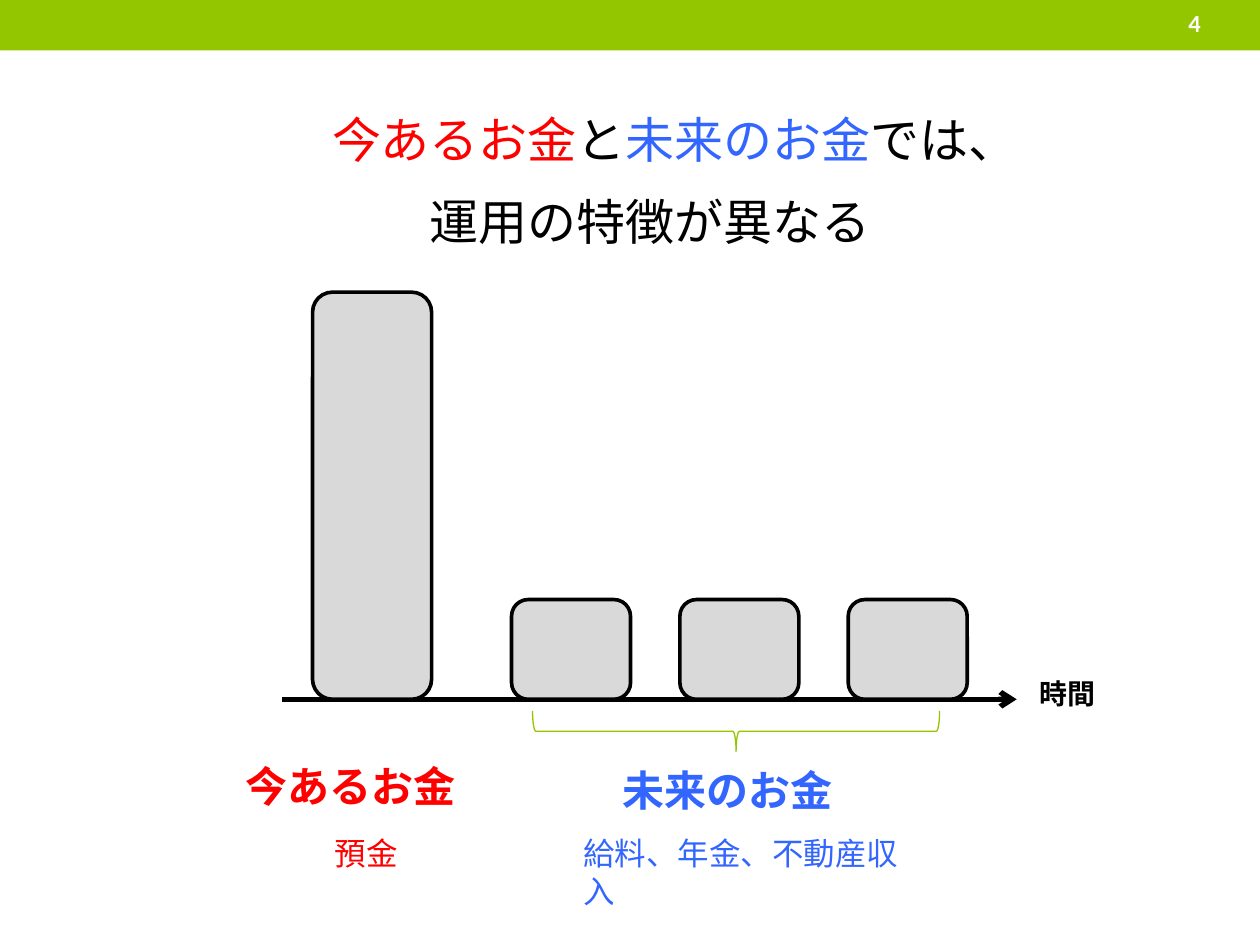
import pptx
import pptx.dml.color
import pptx.enum.shapes
import pptx.enum.text
import pptx.oxml
import pptx.oxml.ns
import pptx.util

Pt = pptx.util.Pt
SHAPE = pptx.enum.shapes.MSO_SHAPE
ALIGN = pptx.enum.text.PP_ALIGN
ANCHOR = pptx.enum.text.MSO_ANCHOR

FONT = "Calibri"
GREEN, RED, BLUE = "94C600", "FF0000", "3366FF"
BLACK, WHITE, GREY = "000000", "FFFFFF", "D9D9D9"


def rgb(color):
    return pptx.dml.color.RGBColor.from_string(color)


def format_run(r, size, color, bold=False):
    r.font.name = FONT
    r.font.size = Pt(size)
    r.font.bold = bold
    r.font.color.rgb = rgb(color)


def add_text(s, box, text, size, color, bold=False, anchor=ANCHOR.TOP):
    tf = s.shapes.add_textbox(*map(Pt, box)).text_frame
    tf.word_wrap = True
    tf.vertical_anchor = anchor
    tf.text = text
    format_run(tf.paragraphs[0].runs[0], size, color, bold)


def add_shape(s, kind, box, fill=None, line=None, width=0):
    sp = s.shapes.add_shape(kind, *map(Pt, box))
    sp.shadow.inherit = False
    if fill:
        sp.fill.solid()
        sp.fill.fore_color.rgb = rgb(fill)
    else:
        sp.fill.background()
    if line:
        sp.line.color.rgb = rgb(line)
        sp.line.width = Pt(width)
    else:
        sp.line.fill.background()
    return sp


def add_header(s, box, number):
    x, y, w, h = box
    add_shape(s, SHAPE.RECTANGLE, box, GREEN)
    add_text(s, (x + w - 48, y, 48, h - 2.8), number, 14, WHITE, True, ANCHOR.MIDDLE)


def set_title(s, box, lines):
    """Fill the title; each line is a list of (text, colour) pairs."""
    sp = s.shapes.title
    sp.left, sp.top, sp.width, sp.height = map(Pt, box)
    tf = sp.text_frame
    tf.word_wrap = True
    tf.auto_size = pptx.enum.text.MSO_AUTO_SIZE.NONE
    tf.vertical_anchor = ANCHOR.TOP
    tf.text = "\n".join("" for _ in lines)
    for p, parts in zip(tf.paragraphs, lines):
        p.alignment = ALIGN.CENTER
        p.line_spacing = 1.4
        p.space_before = Pt(0)
        for text, color in parts:
            r = p.add_run()
            r.text = text
            format_run(r, 28, color)


def add_time_axis(s, x, y, length):
    axis = s.shapes.add_connector(
        pptx.enum.shapes.MSO_CONNECTOR.STRAIGHT, Pt(x), Pt(y), Pt(x + length), Pt(y))
    axis.line.color.rgb = rgb(BLACK)
    axis.line.width = Pt(3)
    tail = pptx.oxml.parse_xml(
        f'<a:tailEnd {pptx.oxml.ns.nsdecls("a")} type="arrow"/>')
    axis.line._get_or_add_ln().append(tail)
    axis._element.spPr.append(
        pptx.oxml.parse_xml(f'<a:effectLst {pptx.oxml.ns.nsdecls("a")}/>'))
    add_text(s, (x + length + 6, y - 16.5, 102, 27), "時間", 16, BLACK, True)


def add_brace(s, box):
    """Place a downward brace in box: a right brace turned by 90 degrees."""
    x, y, w, h = box
    brace = add_shape(s, SHAPE.RIGHT_BRACE,
                      (x + (w - h) / 2, y + (h - w) / 2, h, w), None, GREEN, 0.75)
    brace.rotation = 90


def add_money_bars(s, box):
    """Draw one tall bar for present money and three short ones for future money."""
    x, y, w, h = box
    base = y + h
    bar_w, short_h, pitch = 68, 57, 96.2
    future_x = x + 131
    add_time_axis(s, x, base, w)
    bars = [(x + 17.3, h)] + [(future_x + i * pitch, short_h) for i in range(3)]
    for left, height in bars:
        add_shape(s, SHAPE.ROUNDED_RECTANGLE, (left, base - height, bar_w, height),
                  GREY, BLACK, 2.08)
    add_brace(s, (future_x + 12, base + 6.8, 232.6, 23))


def add_caption(s, box, heading, detail, detail_box, color):
    add_text(s, box, heading, 24, color, True)
    add_text(s, detail_box, detail, 18, color)


def build_slide(prs):
    s = prs.slides.add_slide(prs.slide_layouts[5])
    add_header(s, (0, 0, 720, 28.8), "4")
    set_title(s, (180, 45.4, 383, 102), [
        [("今あるお金", RED), ("と", BLACK), ("未来のお金", BLUE), ("では、", BLACK)],
        [("運用の特徴が異なる", BLACK)],
    ])
    add_money_bars(s, (161.3, 167, 419.7, 232.6))
    add_caption(s, (133.2, 431.3, 153.4, 36.7), "今あるお金",
                "預金", (184.3, 473, 51, 29), RED)
    add_caption(s, (348.5, 433.4, 170, 36.7), "未来のお金",
                "給料、年金、不動産収入", (326.2, 473, 202.3, 29), BLUE)


def main():
    prs = pptx.Presentation()
    prs.slide_width, prs.slide_height = Pt(720), Pt(540)
    build_slide(prs)
    prs.save("out.pptx")


if __name__ == "__main__":
    main()
